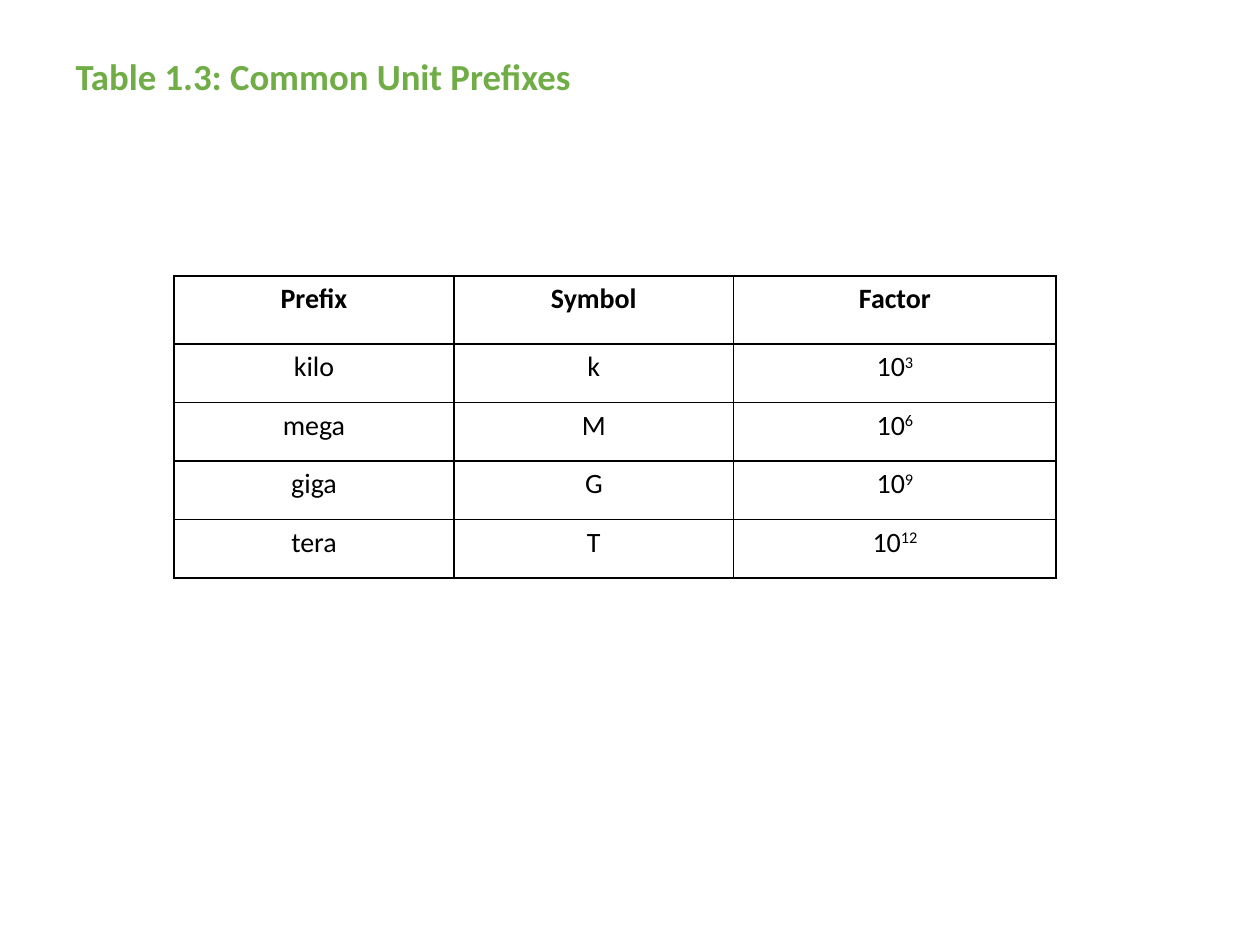
from dataclasses import dataclass

from lxml import etree
from pptx import Presentation
from pptx import util as u
from pptx.dml.color import RGBColor
from pptx.enum import text
from pptx.oxml import ns


@dataclass(frozen=True)
class Theme:
    font: str = "Calibri"
    title_color: str = "70AD47"
    ink: str = "000000"
    title_size: int = 21
    cell_size: int = 16
    border_width: int = 1


theme = Theme()


def style_run(run, size, color, bold=False):
    run.font.name = theme.font
    run.font.size = u.Pt(size)
    run.font.bold = bold
    run.font.color.rgb = RGBColor.from_string(color)


def add_borders(cell):
    """Draw all four sides; the line elements must precede the cell fill."""
    properties = cell._tc.get_or_add_tcPr()
    for position, side in enumerate(("lnL", "lnR", "lnT", "lnB")):
        line = etree.Element(ns.qn(f"a:{side}"), w=str(u.Pt(theme.border_width)))
        fill = etree.SubElement(line, ns.qn("a:solidFill"))
        etree.SubElement(fill, ns.qn("a:srgbClr"), val=theme.ink)
        properties.insert(position, line)


presentation = Presentation()
presentation.slide_width = u.Cm(25.4)
presentation.slide_height = u.Cm(19.05)
slide = presentation.slides.add_slide(presentation.slide_layouts[5])

# Title
title = slide.shapes.title
title.left, title.top = u.Cm(1.27), u.Cm(0.66)
title.width, title.height = u.Cm(22.4), u.Cm(1.83)
title.text_frame.text = "Table 1.3: Common Unit Prefixes"
title.text_frame.vertical_anchor = text.MSO_ANCHOR.MIDDLE
paragraph = title.text_frame.paragraphs[0]
paragraph.alignment = text.PP_ALIGN.LEFT
paragraph.line_spacing = 0.9
style_run(paragraph.runs[0], theme.title_size, theme.title_color, bold=True)

# Prefix table: each cell holds its text and an optional exponent
header = ("Prefix", "Symbol", "Factor")
prefixes = (("kilo", "k", 3), ("mega", "M", 6), ("giga", "G", 9), ("tera", "T", 12))
rows = [[(label, "") for label in header]]
rows += [[(name, ""), (symbol, ""), ("10", str(power))] for name, symbol, power in prefixes]
column_widths = (5.64, 5.64, 6.5)
row_heights = [1.37] + [1.18] * len(prefixes)

table = slide.shapes.add_table(
    len(rows), len(header), u.Cm(3.51), u.Cm(5.56),
    u.Cm(sum(column_widths)), u.Cm(sum(row_heights)),
).table
table.horz_banding = False
for column, width in zip(table.columns, column_widths):
    column.width = u.Cm(width)
for row, height in zip(table.rows, row_heights):
    row.height = u.Cm(height)

for row_index, row in enumerate(rows):
    for column_index, (label, exponent) in enumerate(row):
        cell = table.cell(row_index, column_index)
        cell.fill.background()
        add_borders(cell)
        cell.text_frame.text = label
        paragraph = cell.text_frame.paragraphs[0]
        paragraph.alignment = text.PP_ALIGN.CENTER
        if exponent:
            run = paragraph.add_run()
            run.text = exponent
            run.font._element.set("baseline", "30000")
        for run in paragraph.runs:
            style_run(run, theme.cell_size, theme.ink, bold=row_index == 0)

presentation.save("out.pptx")
